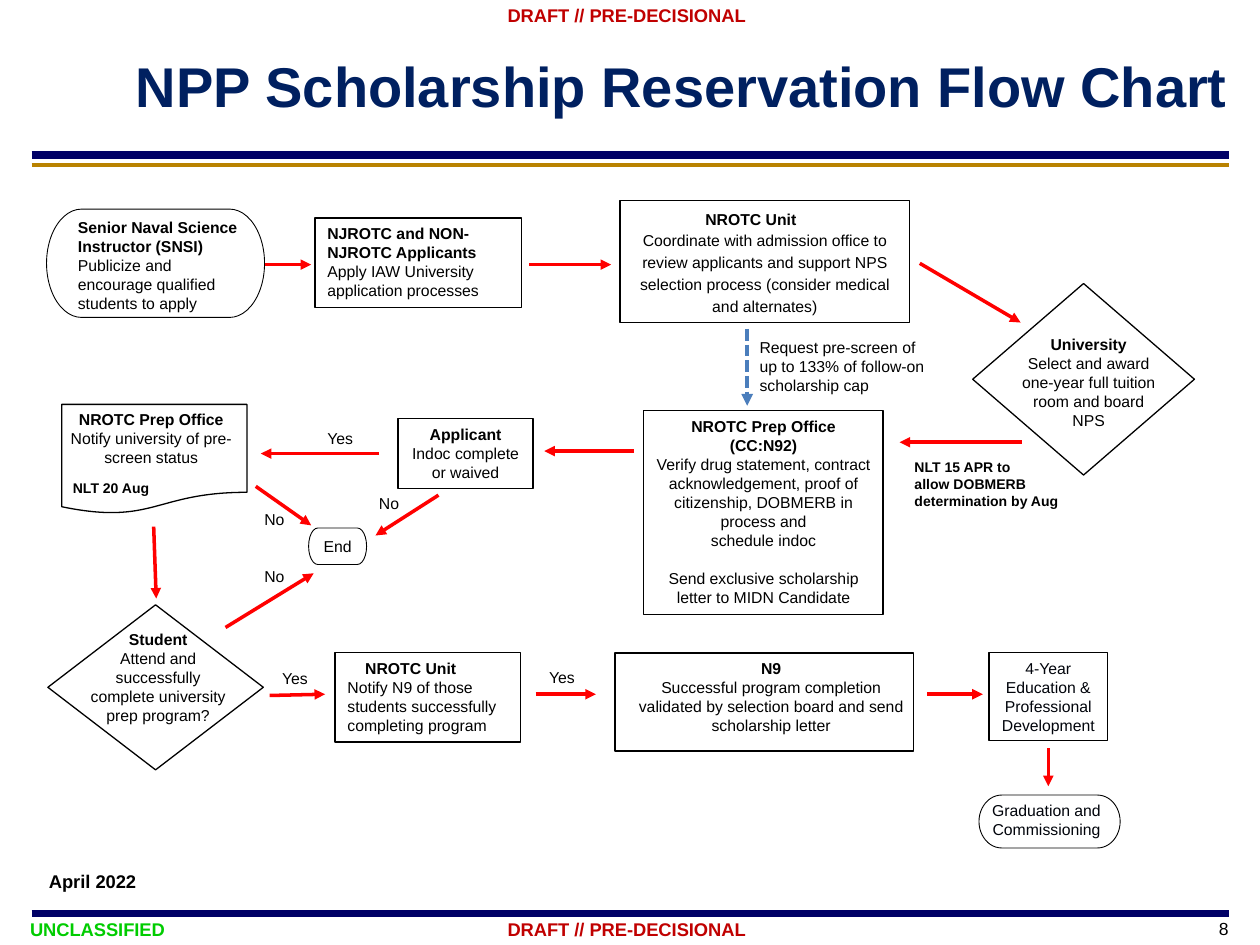
from lxml import etree
from pptx import Presentation
from pptx.dml.color import RGBColor
from pptx.enum.dml import MSO_LINE
from pptx.enum.shapes import MSO_CONNECTOR, MSO_SHAPE
from pptx.enum.text import MSO_ANCHOR, MSO_AUTO_SIZE, PP_ALIGN
from pptx.oxml.ns import qn
from pptx.util import Pt

PX = 9144  # 100 px to the inch
LEFT, CENTER, RIGHT = PP_ALIGN.LEFT, PP_ALIGN.CENTER, PP_ALIGN.RIGHT
TOP, MIDDLE = MSO_ANCHOR.TOP, MSO_ANCHOR.MIDDLE
RECT, DIAMOND = MSO_SHAPE.RECTANGLE, MSO_SHAPE.FLOWCHART_DECISION
TERMINATOR, DOCUMENT = MSO_SHAPE.FLOWCHART_TERMINATOR, MSO_SHAPE.FLOWCHART_DOCUMENT
STRAIGHT = MSO_CONNECTOR.STRAIGHT
COLORS = {
    "text": "000000", "soft": "01040B", "title": "002060", "draft": "C00000",
    "unclassified": "00CC00", "navy": "000066", "gold": "B98200",
    "arrow": "FF0000", "request": "4B7EBC",
}

prs = Presentation()
prs.slide_width, prs.slide_height = 1000 * PX, 750 * PX
slide = prs.slides.add_slide(prs.slide_layouts[5])
shapes = slide.shapes


def write(holder, lines, align=LEFT, bold_lines=0, size=9, color="text", wrap=True, anchor=TOP):
    """Fill a shape with paragraphs, the first bold_lines of them in bold."""
    frame = holder.text_frame
    frame.text = "\n".join(lines)
    frame.auto_size = MSO_AUTO_SIZE.NONE
    frame.word_wrap = wrap
    frame.vertical_anchor = anchor
    for number, paragraph in enumerate(frame.paragraphs):
        paragraph.alignment = align
        for run in paragraph.runs:
            run.font.name = "Arial"
            run.font.size = Pt(size)
            run.font.bold = number < bold_lines
            run.font.color.rgb = RGBColor.from_string(COLORS[color])
    return frame


def draw_line(x1, y1, x2, y2, color, width, arrow=False):
    line = shapes.add_connector(STRAIGHT, x1 * PX, y1 * PX, x2 * PX, y2 * PX)
    line.line.color.rgb = RGBColor.from_string(COLORS[color])
    line.line.width = Pt(width)
    etree.SubElement(line._element.spPr, qn("a:effectLst"))
    if arrow:
        etree.SubElement(line.line._get_or_add_ln(), qn("a:tailEnd"), type="triangle")
    return line


# Title
title = shapes.title
title.left, title.top, title.width, title.height = 50 * PX, 25 * PX, 925 * PX, 85 * PX
write(title, ["NPP Scholarship Reservation Flow Chart"], RIGHT, 1, 32, "title", anchor=MIDDLE)
title.text_frame.margin_right = 0

# Header and footer rules
for y, color, width in [(123, "navy", 4.5), (131, "gold", 2.75), (725, "navy", 4.5)]:
    draw_line(25, y, 975, y, color, width)

# Header and footer markings
for x, y, w, h, marking, color in [
    (393, 1, 212, 23, "DRAFT // PRE-DECISIONAL", "draft"),
    (393, 726, 212, 23, "DRAFT // PRE-DECISIONAL", "draft"),
    (14, 724, 129, 27, "UNCLASSIFIED", "unclassified"),
]:
    box = shapes.add_textbox(x * PX, y * PX, w * PX, h * PX)
    frame = write(box, [marking], LEFT, 1, 10.5, color, False, MIDDLE)
    frame.paragraphs[0].line_spacing = Pt(12)

page = shapes.add_textbox(917 * PX, 724 * PX, 58 * PX, 26 * PX)
write(page, ["8"], RIGHT, size=10).margin_right = 0

# Flow chart outlines: preset, box, line width, text, alignment, bold lines
steps = {}
for step, preset, x, y, w, h, width, lines, align, bold_lines in [
    ("prep notice", DOCUMENT, 49, 321, 147, 87, 0.75, [], CENTER, 0),
    ("instructor", TERMINATOR, 37, 166, 173, 86, 0.5, [], LEFT, 0),
    ("university", DIAMOND, 772, 225, 176, 152, 0.75, [], CENTER, 0),
    ("student", DIAMOND, 38, 480, 171, 131, 0.75, [], CENTER, 0),
    ("end", TERMINATOR, 245, 419, 46, 29, 0.5, [], LEFT, 0),
    ("graduation", TERMINATOR, 777, 631, 112, 42, 0.5, [], CENTER, 0),
    ("board", RECT, 488, 518, 237, 78, 1, [], CENTER, 0),
    ("applicants", RECT, 250, 173, 164, 71, 0.75,
     ["NJROTC and NON-NJROTC Applicants", "Apply IAW University application processes"], LEFT, 1),
    ("unit", RECT, 492, 159, 230, 97, 0.75,
     ["NROTC Unit", "Coordinate with admission office to review applicants and support NPS "
      "selection process (consider medical and alternates)"], CENTER, 1),
    ("prep office", RECT, 511, 326, 190, 162, 0.75,
     ["NROTC Prep Office (CC:N92)", "Verify drug statement, contract acknowledgement, proof of "
      "citizenship, DOBMERB in process and", "schedule indoc",
      "Send exclusive scholarship letter to MIDN Candidate"], CENTER, 1),
    ("applicant", RECT, 316, 332, 107, 56, 0.75,
     ["Applicant", "Indoc complete or waived"], CENTER, 1),
    ("notify", RECT, 266, 518, 147, 71, 0.75,
     ["NROTC Unit", "Notify N9 of those students successfully completing program"], LEFT, 1),
    ("education", RECT, 785, 518, 94, 70, 0.75,
     ["4-Year", "Education &", "Professional", "Development"], CENTER, 0),
]:
    outline = shapes.add_shape(preset, x * PX, y * PX, w * PX, h * PX)
    outline.shadow.inherit = False
    outline.fill.background()
    outline.line.color.rgb = RGBColor.from_string(COLORS["text"])
    outline.line.width = Pt(width)
    if lines:
        color = "soft" if step == "education" else "text"
        steps[step] = write(outline, lines, align, bold_lines, color=color,
                            wrap=step != "education").paragraphs

# Paragraph details: indented headings, line spacing and a gap
for step, indent in [("unit", 58), ("notify", 14)]:
    heading = steps[step][0]
    heading.alignment = LEFT
    heading._p.get_or_add_pPr().set("marL", str(indent * PX))
for paragraph in steps["unit"]:
    paragraph.line_spacing = 1.15
steps["prep office"][3].space_before = Pt(10.8)

# Text laid over the outlines: box, text, alignment, bold lines, size, colour, wrap
for x, y, w, h, lines, align, bold_lines, size, color, wrap in [
    (52, 168, 154, 101, ["Senior Naval Science Instructor (SNSI)",
     "Publicize and encourage qualified students to apply"], LEFT, 1, 9, "text", True),
    (798, 261, 132, 101, ["University",
     "Select and award one-year full tuition room and board NPS"], CENTER, 1, 9, "text", True),
    (45, 320, 150, 56, ["NROTC Prep Office",
     "Notify university of pre-screen status"], CENTER, 1, 9, "text", True),
    (55, 495, 141, 86, ["Student",
     "Attend and successfully complete university prep program?"], CENTER, 1, 9, "text", True),
    (494, 518, 236, 71, ["N9", "Successful program completion validated by selection board "
     "and send scholarship letter"], CENTER, 1, 9, "text", True),
    (768, 631, 125, 40, ["Graduation and Commissioning"], CENTER, 0, 9, "soft", True),
    (593, 263, 152, 56, ["Request pre-screen of up to 133% of follow-on scholarship cap"],
     LEFT, 0, 9, "text", True),
    (716, 359, 137, 50, ["NLT 15 APR to", "allow DOBMERB", "determination by Aug"],
     LEFT, 3, 8, "text", False),
    (48, 376, 83, 24, ["NLT 20 Aug"], LEFT, 1, 8, "text", False),
    (29, 686, 91, 28, ["April 2022"], LEFT, 1, 10.5, "text", False),
]:
    box = shapes.add_textbox(x * PX, y * PX, w * PX, h * PX)
    write(box, lines, align, bold_lines, size, color, wrap)

# Short branch labels
for x, y, label in [
    (247, 421, "End"), (200, 445, "No"), (291, 387, "No"), (200, 400, "No"),
    (426, 525, "Yes"), (250, 335, "Yes"), (214, 526, "Yes"),
]:
    box = shapes.add_textbox(x * PX, y * PX, 43 * PX, 25 * PX)
    write(box, [label])

# Flow arrows
for ends in [
    (210, 210, 247, 210), (420, 210, 485, 210), (730, 209, 810, 256),
    (811, 351, 714, 351), (503, 358, 432, 358), (301, 360, 207, 360),
    (348, 393, 298, 425), (203, 386, 247, 417), (122, 418, 124, 475),
    (179, 498, 249, 455), (214, 552, 258, 551), (425, 551, 473, 551),
    (736, 551, 780, 551), (832, 594, 832, 624),
]:
    draw_line(*ends, "arrow", 2, arrow=True)
request = draw_line(593, 261, 593, 322, "request", 2.25, arrow=True)
request.line.dash_style = MSO_LINE.SQUARE_DOT

prs.save("out.pptx")
